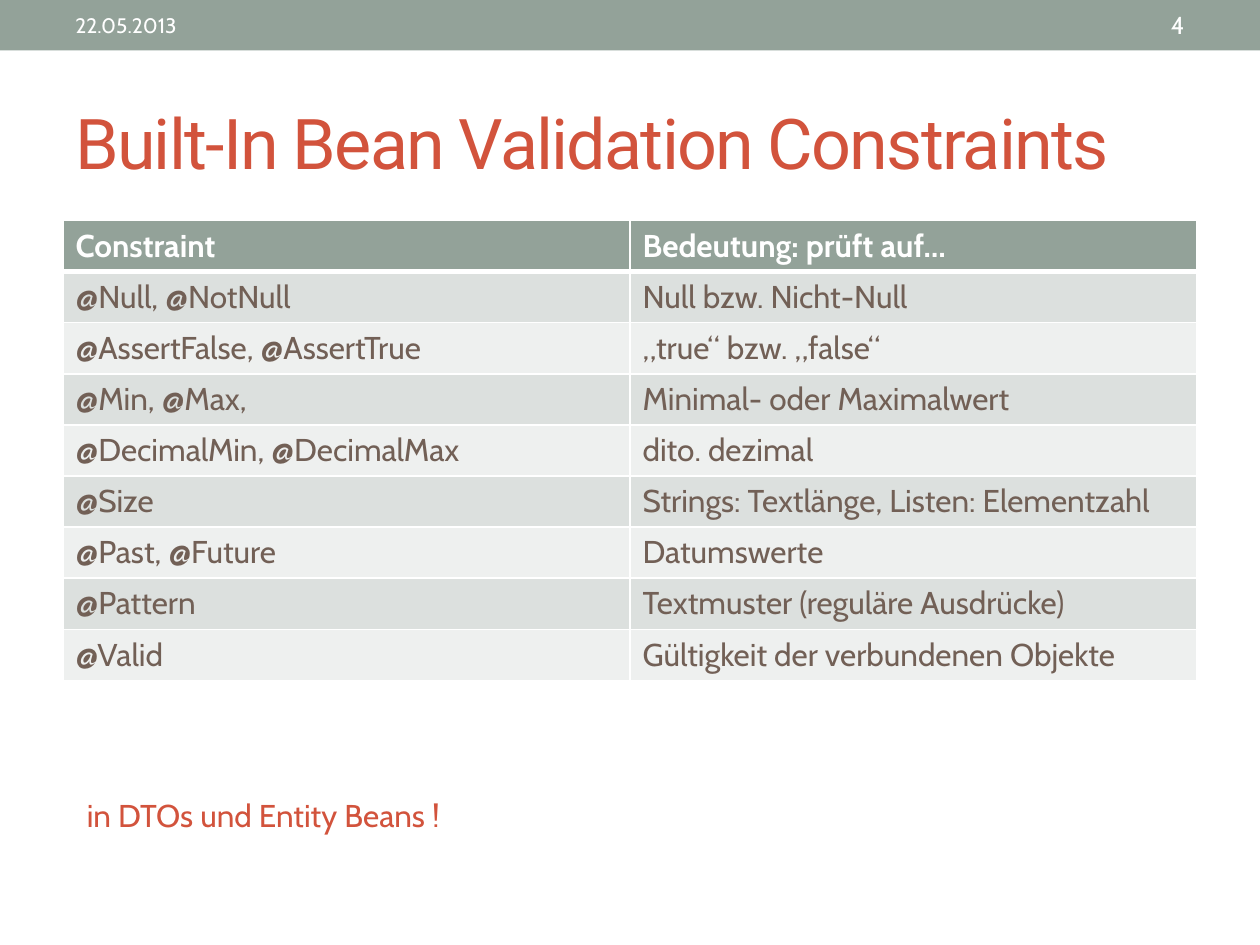
import pptx
import pptx.util
import pptx.dml.color
import pptx.enum.shapes
import pptx.enum.text
import pptx.oxml
import pptx.oxml.ns

Inches = pptx.util.Inches
ANCHOR = pptx.enum.text.MSO_ANCHOR
ALIGN = pptx.enum.text.PP_ALIGN

SAGE, RED, BROWN, WHITE = "93A299", "D2533C", "726056", "FFFFFF"
BANDS = ["DCE0DE", "EEF0EF"]
HEAD = ("Constraint", "Bedeutung: prüft auf…")
RULES = [
    ("@Null, @NotNull", "Null bzw. Nicht-Null"),
    ("@AssertFalse, @AssertTrue", "„true“ bzw. „false“"),
    ("@Min, @Max,", "Minimal- oder Maximalwert"),
    ("@DecimalMin, @DecimalMax", "dito. dezimal"),
    ("@Size", "Strings: Textlänge, Listen: Elementzahl"),
    ("@Past, @Future", "Datumswerte"),
    ("@Pattern", "Textmuster (reguläre Ausdrücke)"),
    ("@Valid", "Gültigkeit der verbundenen Objekte"),
]


def paint(target, color):
    """Give a fill a solid colour."""
    target.solid()
    target.fore_color.rgb = pptx.dml.color.RGBColor.from_string(color)


def write(frame, text, color, size, name="Cabin", bold=False, align=ALIGN.LEFT):
    para = frame.paragraphs[0]
    para.alignment = align
    run = para.add_run()
    run.text = text
    style = {"name": name, "size": pptx.util.Pt(size), "bold": bold}
    for key, value in style.items():
        setattr(run.font, key, value)
    paint(run.font.fill, color)
    return run


def label(slide, box, text, color, size, anchor=ANCHOR.MIDDLE, **style):
    frame = slide.shapes.add_textbox(*map(Inches, box)).text_frame
    frame.word_wrap = True
    frame.vertical_anchor = anchor
    return write(frame, text, color, size, **style)


def edge(cell, bottom):
    """Draw white cell borders, the lower one with its own width in points."""
    props = cell._tc.get_or_add_tcPr()
    widths = {"lnL": 1, "lnR": 1, "lnT": 1, "lnB": bottom}
    for place, (tag, width) in enumerate(widths.items()):
        props.insert(place, pptx.oxml.parse_xml(
            f'<a:{tag} {pptx.oxml.ns.nsdecls("a")} w="{pptx.util.Pt(width)}">'
            f'<a:solidFill><a:srgbClr val="{WHITE}"/></a:solidFill></a:{tag}>'))


def banner(slide, box):
    left, top, width, height = box
    bar = slide.shapes.add_shape(
        pptx.enum.shapes.MSO_SHAPE.RECTANGLE, *map(Inches, box))
    bar.shadow.inherit = False
    paint(bar.fill, SAGE)
    bar.line.fill.background()
    row, tall = top + 0.02, height - 0.04
    label(slide, (left + 0.5, row, 3.17, tall), "22.05.2013", WHITE, 12)
    label(slide, (left + width - 1.67, row, 1.17, tall), "4", WHITE, 14,
          align=ALIGN.RIGHT)


def title(slide, box):
    run = label(slide, box, "Built-In Bean Validation Constraints", RED, 40,
                name="Roboto")
    run._r.get_or_add_rPr().set("spc", "-100")


def grid(slide, box):
    rows = [HEAD] + RULES
    table = slide.shapes.add_table(
        len(rows), len(HEAD), *map(Inches, box)).table
    for r, texts in enumerate(rows):
        top = r == 0
        for c, text in enumerate(texts):
            cell = table.cell(r, c)
            paint(cell.fill, SAGE if top else BANDS[(r - 1) % 2])
            edge(cell, 3 if top else 1)
            write(cell.text_frame, text, WHITE if top else BROWN, 18, bold=top)


def main():
    deck = pptx.Presentation()
    deck.slide_width, deck.slide_height = Inches(10), Inches(7.5)
    slide = deck.slides.add_slide(deck.slide_layouts[6])
    banner(slide, (0, 0, 10, 0.4))
    title(slide, (0.5, 0.58, 9, 1.08))
    grid(slide, (0.5, 1.75, 9, 3.65))
    label(slide, (0.59, 6.27, 8.82, 0.4), "in DTOs und Entity Beans !", RED, 18,
          anchor=ANCHOR.TOP)
    deck.save("out.pptx")


if __name__ == "__main__":
    main()
